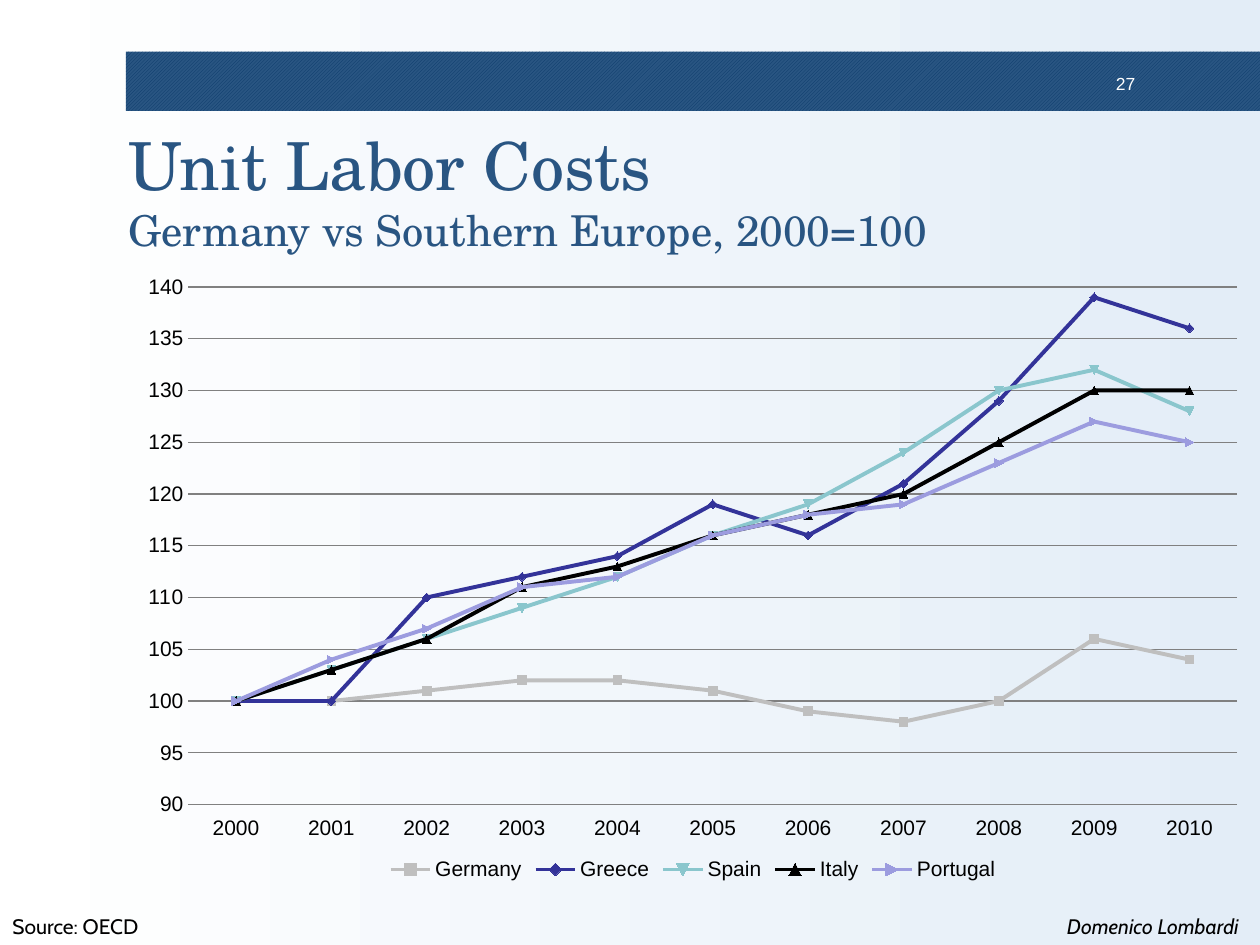
from lxml import etree
from pptx import Presentation
from pptx import util as u
from pptx.chart.data import CategoryChartData
from pptx.dml.color import RGBColor
from pptx.enum import chart as charts, dml, shapes, text
from pptx.oxml.ns import qn

WHITE = RGBColor(0xFF, 0xFF, 0xFF)
BLACK = RGBColor(0, 0, 0)
PALE_BLUE = RGBColor(0xE3, 0xED, 0xF7)
BLUE = RGBColor(0x29, 0x55, 0x82)
DARK_BLUE = RGBColor(0x08, 0x38, 0x68)
GRID_GRAY = RGBColor(0x80, 0x80, 0x80)

COSTS = [
    ("Germany", RGBColor(0xBF, 0xBF, 0xBF), (100, 100, 101, 102, 102, 101, 99, 98, 100, 106, 104)),
    ("Greece", RGBColor(0x33, 0x33, 0x99), (100, 100, 110, 112, 114, 119, 116, 121, 129, 139, 136)),
    ("Spain", RGBColor(0x8A, 0xC6, 0xCD), (100, 103, 106, 109, 112, 116, 119, 124, 130, 132, 128)),
    ("Italy", BLACK, (100, 103, 106, 111, 113, 116, 118, 120, 125, 130, 130)),
    ("Portugal", RGBColor(0x9C, 0x9C, 0xDF), (100, 104, 107, 111, 112, 116, 118, 119, 123, 127, 125)),
]


def add_run(paragraph, words, size, font="Cabin", color=BLACK, italic=False):
    run = paragraph.add_run()
    run.text = words
    run.font.size = u.Pt(size)
    run.font.name = font
    run.font.color.rgb = color
    run.font.italic = italic


prs = Presentation()
prs.slide_width, prs.slide_height = u.Inches(10), u.Inches(7.5)
slide = prs.slides.add_slide(prs.slide_layouts[5])

# Background and header band
backdrop = slide.background.fill
backdrop.gradient()
backdrop.gradient_angle = 0
for stop, color, position in zip(backdrop.gradient_stops, (WHITE, PALE_BLUE), (0, 1)):
    stop.color.rgb = color
    stop.position = position

band = slide.shapes.add_shape(shapes.MSO_SHAPE.RECTANGLE, u.Inches(1), u.Inches(0.41),
                              u.Inches(9), u.Inches(0.47))
band.shadow.inherit = False
band.line.fill.background()
band.fill.patterned()
band.fill.pattern = dml.MSO_PATTERN.LIGHT_UPWARD_DIAGONAL
band.fill.fore_color.rgb = DARK_BLUE
band.fill.back_color.rgb = BLUE

# Title
title = slide.shapes.title
title.left, title.top = u.Inches(0.98), u.Inches(0.94)
title.width, title.height = u.Inches(8.05), u.Inches(1.13)
heading = title.text_frame
heading.auto_size = text.MSO_AUTO_SIZE.NONE
heading.vertical_anchor = text.MSO_ANCHOR.MIDDLE
heading.margin_left = heading.margin_right = u.Inches(0.04)
heading.margin_top = heading.margin_bottom = u.Inches(0.04)
heading_line = heading.paragraphs[0]
heading_line.alignment = text.PP_ALIGN.LEFT
add_run(heading_line, "Unit Labor Costs", 37.8, "TeX Gyre Schola", BLUE)
heading_line.add_line_break()
add_run(heading_line, "Germany vs Southern Europe, 2000=100", 24.3, "TeX Gyre Schola", BLUE)

# Line chart
costs = CategoryChartData(number_format="0")
costs.categories = [str(year) for year in range(2000, 2011)]
for country, _, values in COSTS:
    costs.add_series(country, values)
chart = slide.shapes.add_chart(charts.XL_CHART_TYPE.LINE_MARKERS, u.Inches(1), u.Inches(2.08),
                               u.Inches(9), u.Inches(4.95), costs).chart
chart.has_title = False
chart.font.name = "Arial"
chart.font.size = u.Pt(12)
chart.font.color.rgb = BLACK
chart.has_legend = True
chart.legend.position = charts.XL_LEGEND_POSITION.BOTTOM
chart.legend.include_in_layout = False
chart.plots[0].vary_by_categories = False

for series, (_, color, _) in zip(chart.plots[0].series, COSTS):
    series.smooth = False
    series.format.line.color.rgb = color
    series.format.line.width = u.Pt(2.25)
    series.marker.style = charts.XL_MARKER_STYLE.AUTOMATIC
    series.marker.size = 5
    series.marker.format.fill.solid()
    series.marker.format.fill.fore_color.rgb = color
    series.marker.format.line.color.rgb = color

years, index = chart.category_axis, chart.value_axis
for axis in (years, index):
    axis.major_tick_mark = axis.minor_tick_mark = charts.XL_TICK_MARK.NONE
    axis.tick_labels.font.size = u.Pt(12)
years.format.line.color.rgb = GRID_GRAY
years.tick_label_position = charts.XL_TICK_LABEL_POSITION.LOW
index.minimum_scale, index.maximum_scale, index.major_unit = 90, 140, 5
index.format.line.fill.background()
index.has_major_gridlines = True
index.major_gridlines.format.line.color.rgb = GRID_GRAY
index.major_gridlines.format.line.width = u.Pt(0.75)

# Fixed inner plot area, as fractions of the chart
plot_area = chart.plots[0]._element.getparent()
for old_layout in plot_area.findall(qn("c:layout")):
    plot_area.remove(old_layout)
layout = etree.Element(qn("c:layout"))
manual = etree.SubElement(layout, qn("c:manualLayout"))
for tag, value in (("layoutTarget", "inner"), ("xMode", "edge"), ("yMode", "edge"),
                   ("x", "0.055"), ("y", "0.04"), ("w", "0.925"), ("h", "0.83")):
    etree.SubElement(manual, qn(f"c:{tag}")).set("val", value)
plot_area.insert(0, layout)

# Page number, source and author
LEFT, CENTER, RIGHT = text.PP_ALIGN.LEFT, text.PP_ALIGN.CENTER, text.PP_ALIGN.RIGHT
for words, left, top, width, height, margins, align, style in (
    ("27", 8.67, 0.54, 0.41, 0.23, (0.07, 0.04), RIGHT,
     dict(size=10, font="Arial", color=WHITE)),
    ("Source: OECD", 0, 7.2, 1.31, 0.3, (0.1, 0.05), LEFT, dict(size=12)),
    ("Domenico Lombardi", 8.3, 7.2, 1.7, 0.3, (0.1, 0.05), CENTER, dict(size=12, italic=True)),
):
    frame = slide.shapes.add_textbox(u.Inches(left), u.Inches(top),
                                     u.Inches(width), u.Inches(height)).text_frame
    frame.word_wrap = False
    frame.margin_left = frame.margin_right = u.Inches(margins[0])
    frame.margin_top = frame.margin_bottom = u.Inches(margins[1])
    frame.paragraphs[0].alignment = align
    add_run(frame.paragraphs[0], words, **style)

prs.save("out.pptx")
